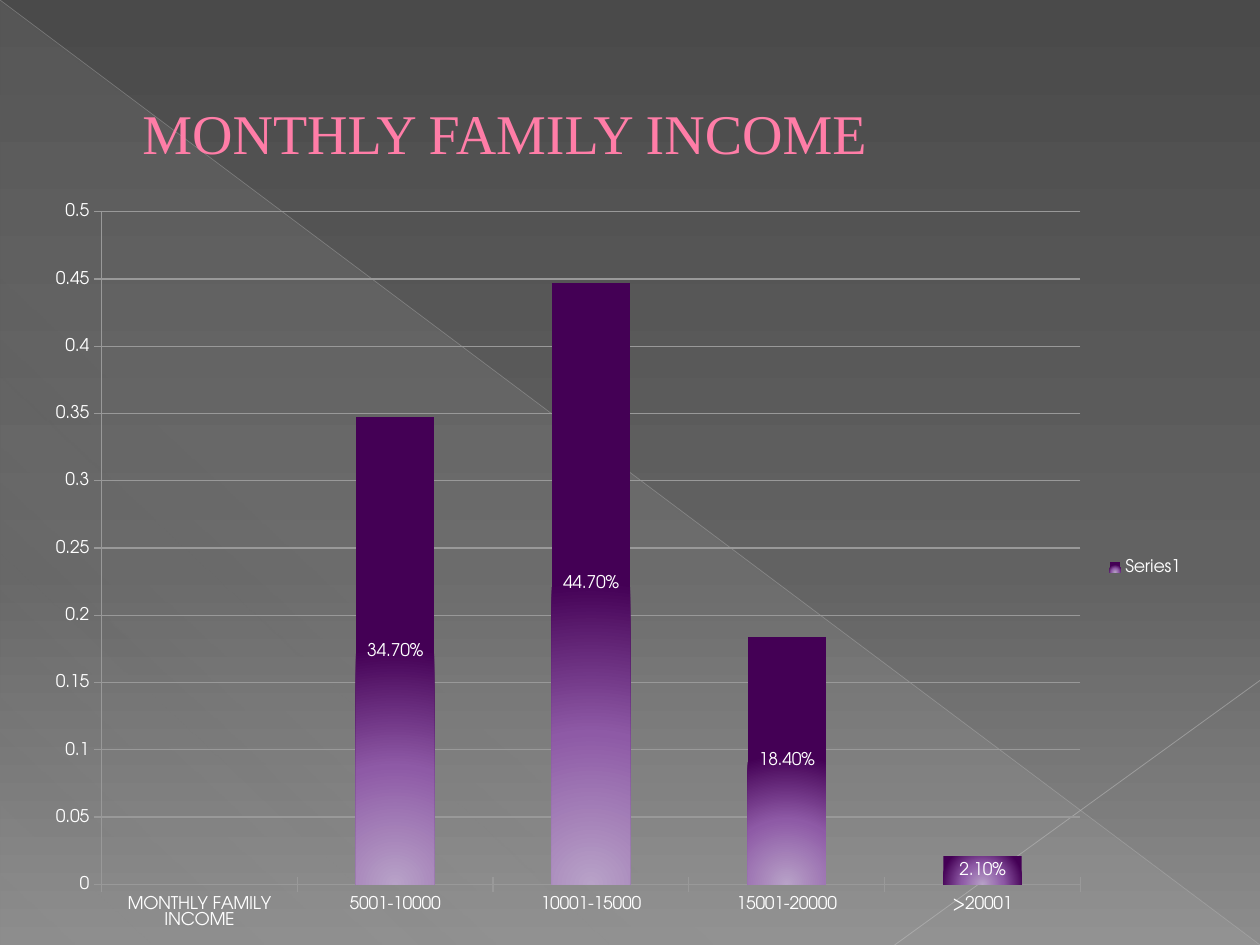
from dataclasses import dataclass

from lxml import etree
from pptx import Presentation, util as u
from pptx.chart.data import CategoryChartData
from pptx.dml.color import RGBColor
from pptx.enum import chart as charts, shapes, text
from pptx.oxml import parse_xml
from pptx.oxml.ns import nsdecls, qn

WIDTH, HEIGHT = u.Inches(10), u.Inches(7.5)
TITLE_ONLY = 5
CHART_FONT = "TeX Gyre Adventor"
COLORS = {
    "title": "FF7DA7", "title_outline": "B12761", "white": "FFFFFF",
    "grid": "999999", "diagonal": "BFBFBF", "corner": "C6C6C6",
}
BAR_SHADE = '<a:path path="circle"><a:fillToRect l="50000" t="100000" r="50000"/></a:path>'
INCOMES = {
    "MONTHLY FAMILY INCOME": None, "5001-10000": 0.347,
    "10001-15000": 0.447, "15001-20000": 0.184, ">20001": 0.021,
}
PLOT_SHARES = {"x": 0.06, "y": 0.03, "w": 0.84, "h": 0.89}


@dataclass
class Stop:
    position: int
    color: str
    opacity: int = 100


@dataclass
class Box:
    """Left, top, width and height as shares of the slide's size."""
    left: float
    top: float
    width: float
    height: float

    def lengths(self) -> tuple:
        return (int(self.left * WIDTH), int(self.top * HEIGHT),
                int(self.width * WIDTH), int(self.height * HEIGHT))


@dataclass
class Ray:
    """A line between two points given as shares of the slide's size."""
    start: tuple
    end: tuple
    color: str
    width: float
    opacity: int


RAYS = [
    Ray((0, 0), (1, 1), "diagonal", 0.39, 35),
    Ray((1, 0.72), (0.71, 1), "corner", 0.47, 45),
]
BACKGROUND = [Stop(0, "4A4A4A"), Stop(60, "626262"), Stop(100, "8C8C8C")]
TRIANGLE = [Stop(0, "D2D2D2", 10), Stop(70, "D2D2D2", 8), Stop(100, "D2D2D2", 1)]
BAR = [Stop(0, "B8A2C8"), Stop(50, "8E5AA6"), Stop(100, "440055")]


def rgb(name: str) -> RGBColor:
    return RGBColor.from_string(COLORS[name])


def linear(degrees: int) -> str:
    return f'<a:lin ang="{degrees * 60000}" scaled="0"/>'


def set_gradient(fill, element, stops: list, shade: str) -> None:
    """Replace the solid fill inside element by a gradient."""
    fill.solid()
    fill.fore_color.rgb = RGBColor(0, 0, 0)
    marks = "".join(
        f'<a:gs pos="{stop.position * 1000}"><a:srgbClr val="{stop.color}">'
        f'<a:alpha val="{stop.opacity * 1000}"/></a:srgbClr></a:gs>' for stop in stops)
    solid = next(element.iter(qn("a:solidFill")))
    solid.getparent().replace(solid, parse_xml(
        f'<a:gradFill {nsdecls("a")} rotWithShape="1"><a:gsLst>{marks}</a:gsLst>{shade}</a:gradFill>'))


def apply_format(target, values: dict) -> None:
    for name, value in values.items():
        setattr(target, name, value)


def draw_ray(slide, ray: Ray) -> None:
    connector = slide.shapes.add_connector(
        shapes.MSO_CONNECTOR.STRAIGHT,
        *(int(share * side) for point in (ray.start, ray.end)
          for share, side in zip(point, (WIDTH, HEIGHT))))
    connector.line.width = u.Pt(ray.width)
    connector.line.color.rgb = rgb(ray.color)
    properties = connector.element.spPr
    color = next(properties.iter(qn("a:srgbClr")))
    etree.SubElement(color, qn("a:alpha")).set("val", str(ray.opacity * 1000))
    etree.SubElement(properties, qn("a:effectLst"))


def draw_backdrop(slide) -> None:
    set_gradient(slide.background.fill, slide.element, BACKGROUND, linear(90))
    triangle = slide.shapes.add_shape(
        shapes.MSO_SHAPE.RIGHT_TRIANGLE, *Box(0, 0, 1, 1).lengths())
    triangle.shadow.inherit = False
    set_gradient(triangle.fill, triangle.element, TRIANGLE, linear(133))
    triangle.line.fill.background()
    for ray in RAYS:
        draw_ray(slide, ray)


def format_title(slide) -> None:
    title = slide.shapes.title
    apply_format(title, dict(zip(("left", "top", "width", "height"),
                                 Box(0.05, 0.04, 0.9, 0.2).lengths())))
    title.text_frame.text = "MONTHLY FAMILY INCOME"
    title.text_frame.vertical_anchor = text.MSO_ANCHOR.MIDDLE
    paragraph = title.text_frame.paragraphs[0]
    paragraph.alignment = text.PP_ALIGN.LEFT
    paragraph_properties = paragraph._p.get_or_add_pPr()
    apply_indent = {"marL": str(u.Inches(0.53)), "indent": "0"}
    for name, value in apply_indent.items():
        paragraph_properties.set(name, value)
    font = paragraph.runs[0].font
    apply_format(font, {"name": "Times New Roman", "size": u.Pt(32)})
    font.color.rgb = rgb("title")
    paragraph.runs[0]._r.get_or_add_rPr().insert(0, parse_xml(
        f'<a:ln {nsdecls("a")} w="{u.Pt(0.5)}"><a:solidFill>'
        f'<a:srgbClr val="{COLORS["title_outline"]}"/></a:solidFill></a:ln>'))
    slide.shapes.element.append(title.element)  # in front of the backdrop


def place_plot(chart) -> None:
    """Fix the inner plot area at shares of the chart's size."""
    plot_area = next(chart.element.iter(qn("c:plotArea")))
    for layout in plot_area.findall(qn("c:layout")):
        plot_area.remove(layout)
    shares = "".join(f'<c:{key} val="{value}"/>' for key, value in PLOT_SHARES.items())
    plot_area.insert(0, parse_xml(
        f'<c:layout {nsdecls("c")}><c:manualLayout><c:layoutTarget val="inner"/>'
        f'<c:xMode val="edge"/><c:yMode val="edge"/>{shares}</c:manualLayout></c:layout>'))


def draw_chart(slide) -> None:
    data = CategoryChartData(number_format="0.00%")
    data.categories = list(INCOMES)
    data.add_series("Series1", list(INCOMES.values()))
    chart = slide.shapes.add_chart(
        charts.XL_CHART_TYPE.COLUMN_STACKED,
        *Box(0.025, 0.2, 0.925, 0.8).lengths(), data).chart
    apply_format(chart, {"has_title": False, "has_legend": True})
    apply_format(chart.font, {"name": CHART_FONT, "size": u.Pt(10)})
    chart.font.color.rgb = rgb("white")
    apply_format(chart.legend, {"position": charts.XL_LEGEND_POSITION.RIGHT,
                                "include_in_layout": False})
    apply_format(chart.value_axis, {"minimum_scale": 0, "maximum_scale": 0.5,
                                    "major_unit": 0.05, "has_major_gridlines": True})
    apply_format(chart.value_axis.tick_labels,
                 {"number_format": "General", "number_format_is_linked": False})
    chart.value_axis.major_tick_mark = charts.XL_TICK_MARK.CROSS
    chart.category_axis.major_tick_mark = charts.XL_TICK_MARK.CROSS
    for lines in (chart.value_axis, chart.category_axis, chart.value_axis.major_gridlines):
        lines.format.line.color.rgb = rgb("grid")
        lines.format.line.width = u.Pt(0.75)

    plot = chart.plots[0]
    apply_format(plot, {"gap_width": 150, "overlap": 100,
                        "vary_by_categories": False, "has_data_labels": True})
    apply_format(plot.data_labels, {"show_value": True, "number_format": "0.00%",
                                    "number_format_is_linked": False})
    series = plot.series[0]
    set_gradient(series.format.fill, series._element, BAR, BAR_SHADE)
    place_plot(chart)


def main() -> None:
    presentation = Presentation()
    apply_format(presentation, {"slide_width": WIDTH, "slide_height": HEIGHT})
    slide = presentation.slides.add_slide(presentation.slide_layouts[TITLE_ONLY])
    draw_backdrop(slide)
    format_title(slide)
    draw_chart(slide)
    presentation.save("out.pptx")


if __name__ == "__main__":
    main()
